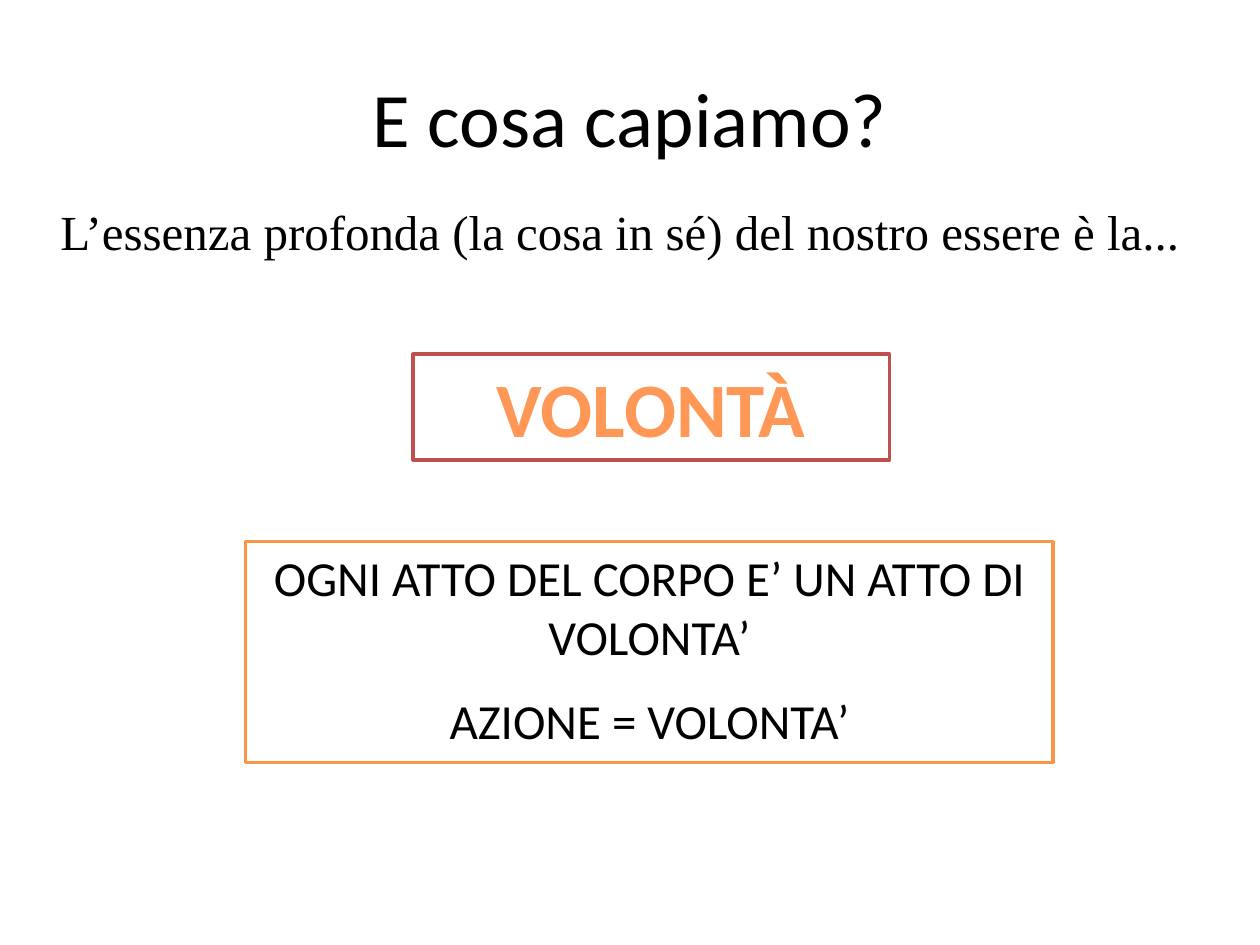
from pptx import Presentation
from pptx.dml.color import RGBColor
from pptx.enum.shapes import MSO_SHAPE
from pptx.enum.text import MSO_ANCHOR, PP_ALIGN
from pptx.util import Cm, Pt

BLACK = RGBColor(0x00, 0x00, 0x00)
WHITE = RGBColor(0xFF, 0xFF, 0xFF)
ORANGE = RGBColor(0xF7, 0x96, 0x46)
RED = RGBColor(0xC0, 0x50, 0x4D)
LIGHT_ORANGE = RGBColor(0xFF, 0x98, 0x56)

TITLE_FORMAT = {"name": "Calibri", "size": Pt(44), "bold": False}
INTRO_FORMAT = {"name": "Times New Roman", "size": Pt(28), "bold": False}
KEYWORD_FORMAT = {"name": "Calibri", "size": Pt(44), "bold": True}
BODY_FORMAT = {"name": "Calibri", "size": Pt(28), "bold": False}


def write_text(shape, lines, font_format, color, anchor=MSO_ANCHOR.TOP):
    """Fill a shape with centred paragraphs in one format."""
    frame = shape.text_frame
    frame.word_wrap = True
    frame.vertical_anchor = anchor
    frame.text = "\n".join(lines)
    for index, paragraph in enumerate(frame.paragraphs):
        paragraph.alignment = PP_ALIGN.CENTER
        paragraph.space_before = Pt(14 if index else 0)
        for name, value in font_format.items():
            setattr(paragraph.font, name, value)
        paragraph.font.color.rgb = color


def place_title(slide, box, text):
    """Move and format the title placeholder."""
    title = slide.shapes.title
    title.left, title.top, title.width, title.height = box
    write_text(title, [text], TITLE_FORMAT, BLACK, MSO_ANCHOR.MIDDLE)


def add_intro(slide, box, text):
    """Add the introductory sentence."""
    write_text(slide.shapes.add_textbox(*box), [text], INTRO_FORMAT, BLACK)


def add_framed_text(slide, box, lines, line_color, font_format, color):
    """Add a white rectangle with a coloured outline and text."""
    shape = slide.shapes.add_shape(MSO_SHAPE.RECTANGLE, *box)
    shape.shadow.inherit = False
    shape.fill.solid()
    shape.fill.fore_color.rgb = WHITE
    shape.line.color.rgb = line_color
    shape.line.width = Pt(2)
    write_text(shape, lines, font_format, color)


def main():
    """Build the slide and save it."""
    presentation = Presentation()
    presentation.slide_width, presentation.slide_height = Cm(25.4), Cm(19.05)
    slide = presentation.slides.add_slide(presentation.slide_layouts[5])
    place_title(slide, (Cm(1.27), Cm(0.76), Cm(22.86), Cm(3.18)), "E cosa capiamo?")
    add_intro(
        slide,
        (Cm(0.58), Cm(3.94), Cm(23.83), Cm(1.45)),
        "L’essenza profonda (la cosa in sé) del nostro essere è la...",
    )
    add_framed_text(
        slide,
        (Cm(4.95), Cm(10.92), Cm(16.28), Cm(4.45)),
        ["OGNI ATTO DEL CORPO E’ UN ATTO DI VOLONTA’", "AZIONE = VOLONTA’"],
        ORANGE, BODY_FORMAT, BLACK,
    )
    add_framed_text(
        slide,
        (Cm(8.33), Cm(7.14), Cm(9.6), Cm(2.13)),
        ["VOLONTÀ"],
        RED, KEYWORD_FORMAT, LIGHT_ORANGE,
    )
    presentation.save("out.pptx")


if __name__ == "__main__":
    main()
